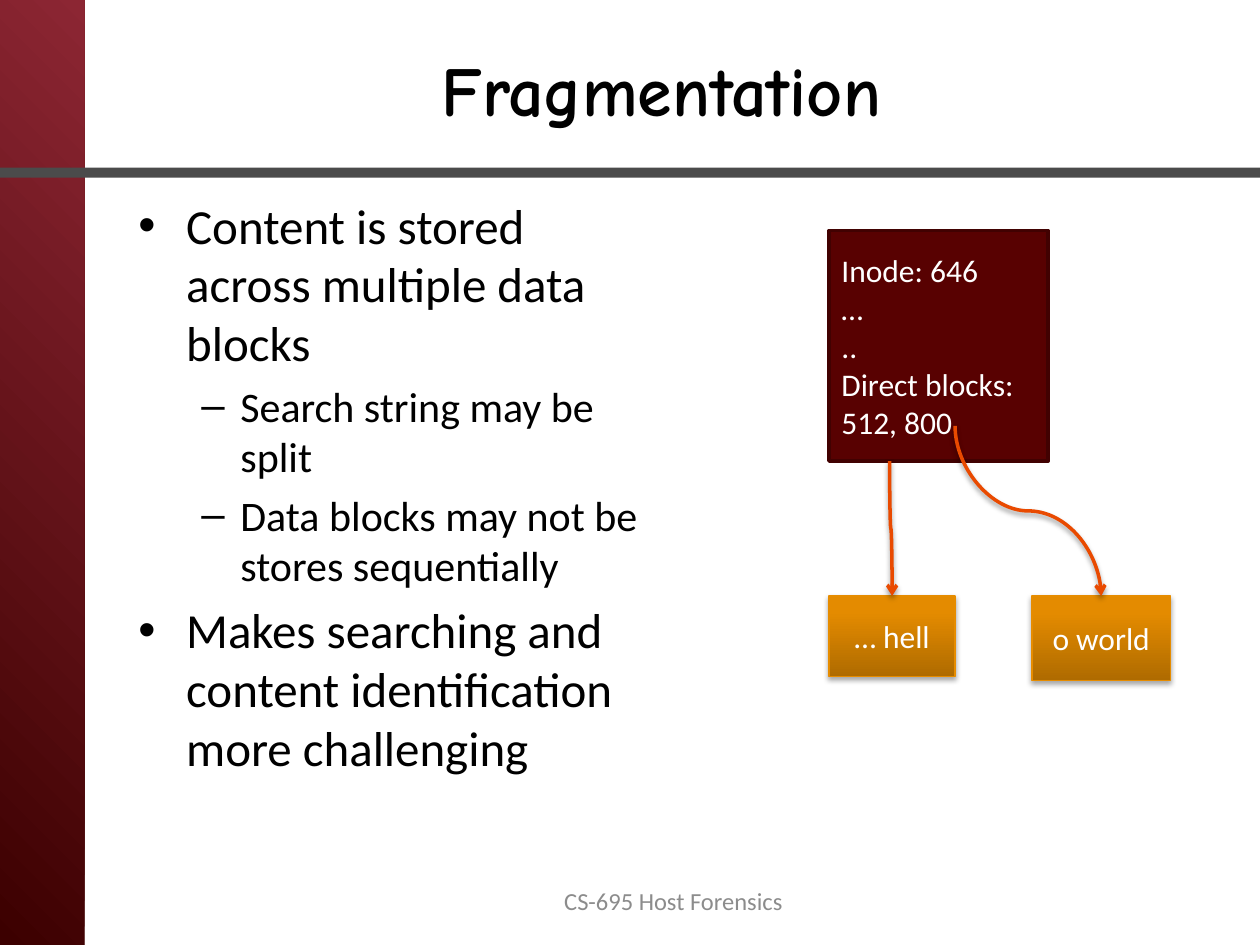
from collections import namedtuple
from dataclasses import dataclass

from lxml import etree
from pptx import Presentation
from pptx import util as u
from pptx.dml.color import RGBColor
from pptx.enum import shapes, text
from pptx.oxml import parse_xml
from pptx.oxml.ns import nsdecls, qn

UNIT = u.Inches(0.1)  # the page is a grid of 100 columns by 75 rows


@dataclass(frozen=True)
class Theme:
    body: str = "Calibri"
    head: str = "Comic Neue"
    black: str = "000000"
    white: str = "FFFFFF"
    grey: str = "8C8C8C"
    rule: str = "4B4B4B"
    inode: str = "580101"
    edge: str = "410101"
    rim: str = "E68C00"
    arrow: str = "E94A00"
    side: tuple = ((0, "3C0000"), (100, "8C2633"))
    block: tuple = ((0, "AF6B00"), (80, "E48B00"), (100, "E58B00"))
    title: int = 40
    levels: tuple = (28, 24)
    label: int = 18
    foot: int = 14


T = Theme()


class Box(namedtuple("Box", "x y w h")):
    """An area in grid columns and rows."""

    def inner(self, x, y, w, h):
        return Box(self.x + x, self.y + y, w, h)

    def emu(self):
        return [round(v * UNIT) for v in self]


def rgb(code):
    return RGBColor.from_string(code)


def style(para, size, color, font=T.body, bold=None, align=None):
    para.alignment = align
    para.font.name, para.font.size, para.font.bold = font, u.Pt(size), bold
    para.font.color.rgb = rgb(color)


def write(shape, lines, size, color, align, **kw):
    frame = shape.text_frame
    frame.word_wrap = True
    frame.vertical_anchor = text.MSO_ANCHOR.MIDDLE
    frame.text = "\n".join(lines)
    for para in frame.paragraphs:
        style(para, size, color, align=align, **kw)


def rect(slide, box, fill, line=None, width=1):
    shape = slide.shapes.add_shape(shapes.MSO_SHAPE.RECTANGLE, *box.emu())
    shape.shadow.inherit = False
    if fill:
        shape.fill.solid()
        shape.fill.fore_color.rgb = rgb(fill)
    if line:
        shape.line.color.rgb = rgb(line)
        shape.line.width = u.Pt(width)
    else:
        shape.line.fill.background()
    return shape


def grade(shape, stops, angle):
    """Fill with a gradient; the angle runs clockwise."""
    marks = "".join(f'<a:gs pos="{at * 1000}"><a:srgbClr val="{code}"/></a:gs>'
                    for at, code in stops)
    shape._element.spPr.find(qn("a:prstGeom")).addnext(parse_xml(
        f'<a:gradFill {nsdecls("a")} rotWithShape="1"><a:gsLst>{marks}</a:gsLst>'
        f'<a:lin ang="{angle * 60000}" scaled="0"/></a:gradFill>'))


def shade(shape, alpha, dist):
    """Drop a soft shadow straight down."""
    props = shape._element.spPr
    for old in props.findall(qn("a:effectLst")):
        props.remove(old)
    props.append(parse_xml(
        f'<a:effectLst {nsdecls("a")}><a:outerShdw blurRad="{u.Pt(3.1)}" '
        f'dist="{u.Pt(dist)}" dir="5400000" rotWithShape="0">'
        f'<a:srgbClr val="{T.black}"><a:alpha val="{alpha * 1000}"/></a:srgbClr>'
        '</a:outerShdw></a:effectLst>'))


def frame(slide, page):
    side = rect(slide, page.inner(0, 0, 6.7, page.h), None)
    grade(side, T.side, 315)
    rect(slide, page.inner(0, 13.3, page.w, 0.8), T.rule)


def title(slide, box, words):
    shape = slide.shapes.title
    shape.left, shape.top, shape.width, shape.height = box.emu()
    write(shape, [words], T.title, T.black, text.PP_ALIGN.CENTER,
          font=T.head, bold=True)


def points(slide, box, items):
    body = slide.shapes.add_textbox(*box.emu()).text_frame
    body.word_wrap = True
    marks = (("•", 0.38, 0.38), ("–", 0.81, 0.31))
    for i, (level, words) in enumerate(items):
        para = body.add_paragraph() if i else body.paragraphs[0]
        para.text, para.level = words, level
        sign, left, hang = marks[level]
        props = para._p.get_or_add_pPr()
        props.set("marL", str(u.Inches(left)))
        props.set("indent", str(-u.Inches(hang)))
        etree.SubElement(props, qn("a:buFont")).set("typeface", "Arial")
        etree.SubElement(props, qn("a:buChar")).set("char", sign)
        size = T.levels[level]
        if i:
            para.space_before = u.Pt(size * 0.2)
        style(para, size, T.black)


def block(slide, box, words):
    shape = rect(slide, box, None, T.rim, 0.75)
    grade(shape, T.block, 270)
    shade(shape, 35, 1.8)
    write(shape, [words], T.label, T.white, text.PP_ALIGN.CENTER)


def curve(slide, x, y, box):
    """Run an arrow down from a point to the top middle of a box."""
    endx, endy = box.x + box.w / 2, box.y
    midx, midy = (x + endx) / 2, (y + endy) / 2
    halfw, halfh = (endy - y) / 2, (endx - x) / 2  # turned a quarter
    ends = (midx + halfw, midy - halfh, midx - halfw, midy + halfh)
    link = slide.shapes.add_connector(
        shapes.MSO_CONNECTOR.CURVE, *(round(v * UNIT) for v in ends))
    link._element.spPr.find(qn("a:xfrm")).set("rot", str(270 * 60000))
    link.line.color.rgb = rgb(T.arrow)
    link.line.width = u.Pt(2)
    etree.SubElement(link.line._get_or_add_ln(), qn("a:tailEnd")).set("type", "arrow")
    shade(link, 38, 1.6)


def diagram(slide, box):
    inode = box.inner(0, 0, 17.4, 18.3)
    shape = rect(slide, inode, T.inode, T.edge, 2)
    write(shape, ["Inode: 646", "…", "..", "Direct blocks:", "512, 800"],
          T.label, T.white, text.PP_ALIGN.LEFT)
    first = box.inner(0, 29, 10, 6.4)
    last = box.inner(box.w - 11, 29, 11, 6.7)
    block(slide, first, "… hell")
    block(slide, last, "o world")
    curve(slide, box.x + 4.8, inode.y + inode.h, first)
    curve(slide, box.x + 10, box.y + 15.5, last)


def footer(slide, box, words):
    shape = slide.shapes.add_textbox(*box.emu())
    write(shape, [words], T.foot, T.grey, text.PP_ALIGN.CENTER)


def main():
    deck = Presentation()
    page = Box(0, 0, 100, 75)
    deck.slide_width, deck.slide_height = page.emu()[2:]
    slide = deck.slides.add_slide(deck.slide_layouts[5])
    slide.background.fill.solid()
    slide.background.fill.fore_color.rgb = rgb(T.white)
    frame(slide, page)
    title(slide, page.inner(10, 1.5, 85, 11), "Fragmentation")
    points(slide, page.inner(10, 15, 42, 53.3), [
        (0, "Content is stored across multiple data blocks"),
        (1, "Search string may be split"),
        (1, "Data blocks may not be stores sequentially"),
        (0, "Makes searching and content identification more challenging"),
    ])
    diagram(slide, page.inner(65.8, 18.3, 27.1, 35.7))
    footer(slide, page.inner(41, 69.5, 24.9, 4), "CS-695 Host Forensics")
    deck.save("out.pptx")


if __name__ == "__main__":
    main()
